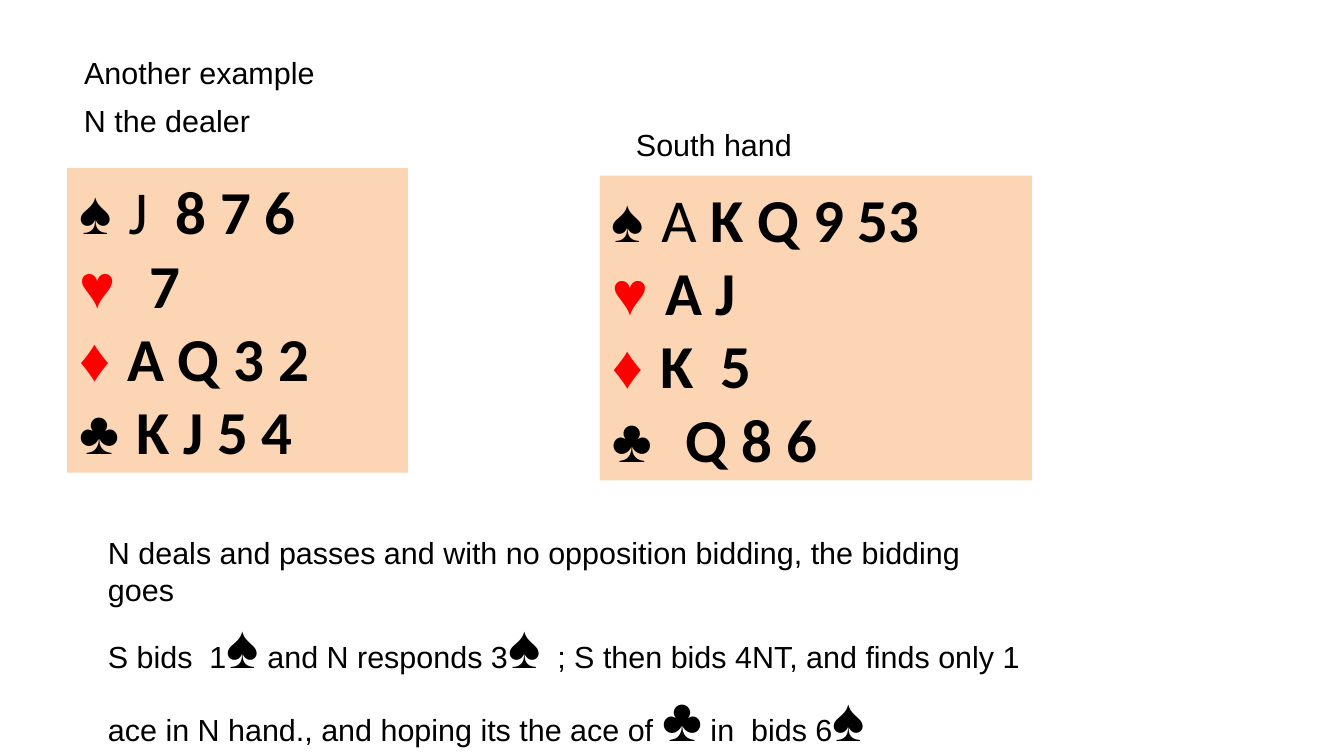
from pptx import Presentation, util as u
from pptx.dml.color import RGBColor
from pptx.enum import shapes, text

BLACK, RED, PEACH = "000000", "FF0000", "FCD5B5"
NORTH = [("♠ ", "J", "  8 7 6"), ("♥  ", "", "7"),
         ("♦ ", "", "A Q 3 2"), ("♣ ", "", "K J 5 4")]
SOUTH = [("♠ ", "A", " K Q 9 53"), ("♥ ", "", "A J"),
         ("♦ ", "", "K  5"), ("♣  ", "", "Q 8 6")]
BIDS = [["N deals and passes and with no opposition bidding, the bidding goes"],
        ["S bids  1", "♠", " and N responds 3", "♠",
         "  ; S then bids 4NT, and finds only 1 ace in N hand., and hoping its the ace of ",
         "♣", " in  bids 6", "♠"]]


def tint(color, code):
    """Set a colour from a hex string."""
    color.rgb = RGBColor.from_string(code)


def place(shape, box):
    """Move a shape to a box in centimetres."""
    shape.left, shape.top, shape.width, shape.height = map(u.Cm, box)


def frame(shape):
    """Give a shape wrapped text that starts at its top and return the frame."""
    body = shape.text_frame
    body.word_wrap = True
    body.auto_size = text.MSO_AUTO_SIZE.NONE
    body.vertical_anchor = text.MSO_ANCHOR.TOP
    return body


def style(run, size=18, face="Arial", bold=False, code=BLACK):
    """Format one run."""
    font = run.font
    font.size, font.name, font.bold = u.Pt(size), face, bold
    tint(font.color, code)


def write(body, lines):
    """Fill a frame with lines of (text, format) parts."""
    for i, line in enumerate(lines):
        para = body.add_paragraph() if i else body.paragraphs[0]
        para.alignment = text.PP_ALIGN.LEFT
        for words, form in line:
            run = para.add_run()
            run.text = words
            style(run, **form)


def title(slide, box, words):
    """Set the title in its placeholder."""
    place(slide.shapes.title, box)
    write(frame(slide.shapes.title), [[(words, {})]])


def label(slide, box, words):
    """Add a one-line label."""
    area = slide.shapes.add_textbox(*map(u.Cm, box))
    write(frame(area), [[(words, {})]])


def hand(slide, box, rows):
    """Draw a hand of cards, one suit a line."""
    card = slide.shapes.add_shape(shapes.MSO_SHAPE.RECTANGLE, *map(u.Cm, box))
    card.shadow.inherit = False
    card.fill.solid()
    tint(card.fill.fore_color, PEACH)
    card.line.fill.background()
    lines = []
    for suit, light, heavy in rows:
        code = RED if suit[0] in "♥♦" else BLACK
        line = [(suit, dict(size=36, bold=suit[0] != "♠", code=code))]
        if light:
            line.append((light, dict(size=36, face="Calibri")))
        line.append((heavy, dict(size=36, face="Calibri", bold=True)))
        lines.append(line)
    write(frame(card), lines)


def story(slide, box, lines):
    """Tell the bidding, with large suit symbols."""
    area = slide.shapes.add_textbox(*map(u.Cm, box))
    write(frame(area), [[(part, dict(size=36 if part in "♠♣" else 18, bold=part == "♣"))
                         for part in line] for line in lines])


def deal(slide, box):
    """Lay out the whole deal in the given box."""
    x, y, w, h = box
    title(slide, (x + 1.5, y + 1, w - 3.5, 0.97), "Another example")
    label(slide, (x + 1.5, y + 2, 6.5, 0.97), "N the dealer")
    label(slide, (x + 13, y + 2.5, 8, 0.97), "South hand")
    hand(slide, (x + 1.4, y + 3.5, 7.1, 6.35), NORTH)
    hand(slide, (x + 12.5, y + 3.66, 9, 6.35), SOUTH)
    story(slide, (x + 2, y + 11, 19.5, h - 11), BIDS)


def main():
    """Build and save the deck."""
    deck = Presentation()
    wide, high = 28, 15.75
    deck.slide_width, deck.slide_height = u.Cm(wide), u.Cm(high)
    deal(deck.slides.add_slide(deck.slide_layouts[5]), (0, 0, wide, high))
    deck.save("out.pptx")


if __name__ == "__main__":
    main()
